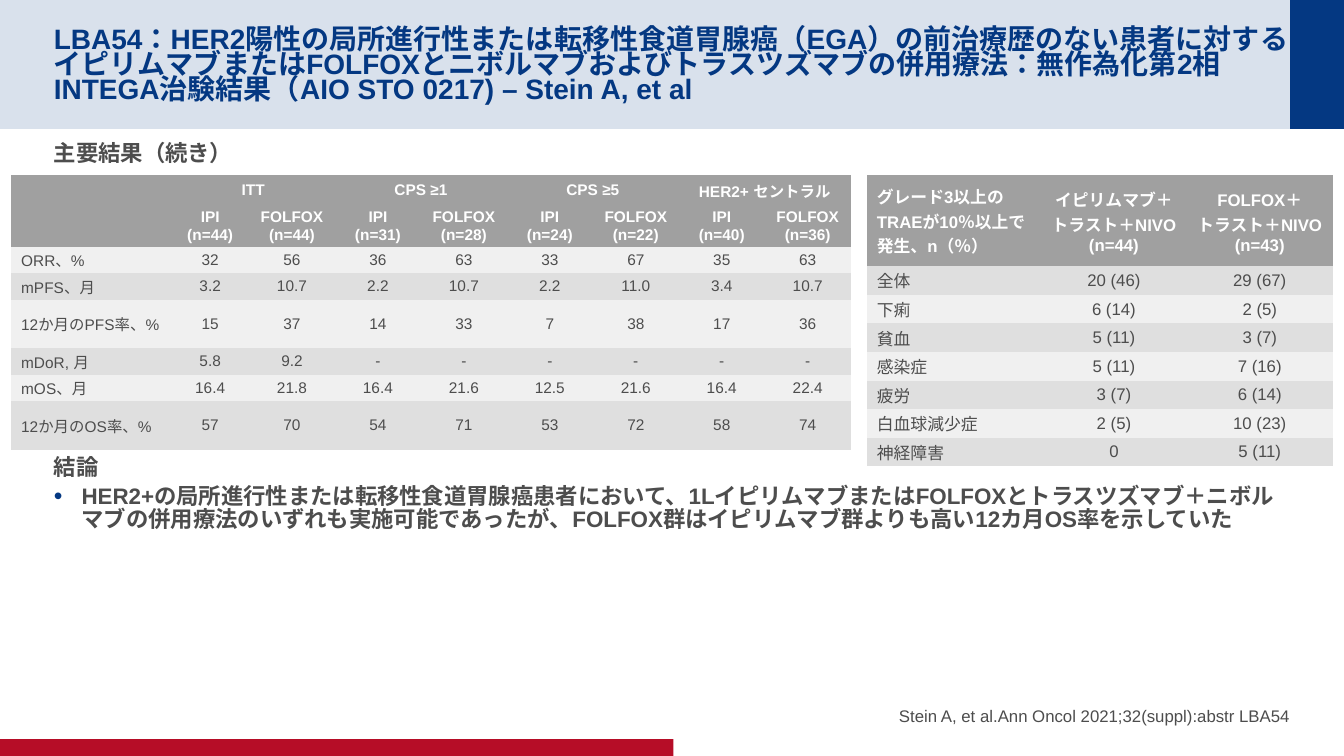
"""Build the slide of INTEGA trial results with an efficacy table and a toxicity table."""
import copy

import pptx
import pptx.dml.color
import pptx.enum.lang
import pptx.enum.shapes
import pptx.enum.text
import pptx.oxml
import pptx.oxml.ns
import pptx.util

Pt = pptx.util.Pt
ALIGN = pptx.enum.text.PP_ALIGN
ANCHOR = pptx.enum.text.MSO_ANCHOR
NAVY, RED, TEXT, WHITE = "043882", "B60D27", "4D4D4D", "FFFFFF"
HEADER, LIGHT, DARK = "A0A0A0", "F0F0F0", "DFDFDF"
NO_STYLE = "{2D5ABB26-0587-4C30-8999-92F81FD0307C}"

TITLE = ("LBA54：HER2陽性の局所進行性または転移性食道胃腺癌（EGA）の前治療歴のない患者に対する"
         "イピリムマブまたはFOLFOXとニボルマブおよびトラスツズマブの併用療法：無作為化第2相INTEGA"
         "治験結果（AIO STO 0217) – Stein A, et al")
RESULTS, CONCLUSION = "主要結果（続き）", "結論"
FINDING = ("HER2+の局所進行性または転移性食道胃腺癌患者において、1LイピリムマブまたはFOLFOXと"
           "トラスツズマブ＋ニボルマブの併用療法のいずれも実施可能であったが、FOLFOX群はイピリムマブ群よりも"
           "高い12カ月OS率を示していた")
CITATION = "Stein A, et al.Ann Oncol 2021;32(suppl):abstr LBA54"

GROUPS = [("ITT", 44, 44), ("CPS ≥1", 31, 28), ("CPS ≥5", 24, 22), ("HER2+ セントラル", 40, 36)]
EFFICACY = [
    ("ORR、%", "32", "56", "36", "63", "33", "67", "35", "63"),
    ("mPFS、月", "3.2", "10.7", "2.2", "10.7", "2.2", "11.0", "3.4", "10.7"),
    ("12か月のPFS率、%", "15", "37", "14", "33", "7", "38", "17", "36"),
    ("mDoR, 月", "5.8", "9.2", "-", "-", "-", "-", "-", "-"),
    ("mOS、月", "16.4", "21.8", "16.4", "21.6", "12.5", "21.6", "16.4", "22.4"),
    ("12か月のOS率、%", "57", "70", "54", "71", "53", "72", "58", "74"),
]
TOXICITY = [
    ("グレード3以上のTRAEが10％以上で発生、n（％）", "イピリムマブ＋トラスト＋NIVO\n(n=44)",
     "FOLFOX＋\nトラスト＋NIVO\n(n=43)"),
    ("全体", "20 (46)", "29 (67)"),
    ("下痢", "6 (14)", "2 (5)"),
    ("貧血", "5 (11)", "3 (7)"),
    ("感染症", "5 (11)", "7 (16)"),
    ("疲労", "3 (7)", "6 (14)"),
    ("白血球減少症", "2 (5)", "10 (23)"),
    ("神経障害", "0", "5 (11)"),
]
BANDS = [
    (0, 0, 960, 92.16, NAVY, 15),
    (921.6, 0, 38.4, 92.16, NAVY, 100),
    (0, 528, 481, 12, RED, 100),
]


def colour(value):
    """Turn a hex string into a colour."""
    return pptx.dml.color.RGBColor.from_string(value)


def assign(target, values):
    """Set each named attribute on the target."""
    for name, value in values.items():
        setattr(target, name, value)


def element(tag, **attributes):
    """Make a drawing element with attributes."""
    node = pptx.oxml.parse_xml(f"<{tag} {pptx.oxml.ns.nsdecls('a')}/>")
    for name, value in attributes.items():
        node.set(name, str(value))
    return node


def write(para, text, size, shade, bold=False, **layout):
    """Fill a paragraph with text, its line breaks included."""
    para.text = text
    assign(para, layout)
    for span in para.runs:
        assign(span.font, {"name": "Arial", "size": Pt(size), "bold": bold,
                           "language_id": pptx.enum.lang.MSO_LANGUAGE_ID.JAPANESE})
        span.font.color.rgb = colour(shade)
    for line_break in para._p.findall(pptx.oxml.ns.qn("a:br")):
        line_break.append(copy.deepcopy(para.runs[0]._r.rPr))


def add_band(page, left, top, width, height, shade, opacity):
    """Draw one flat rectangle."""
    band = page.shapes.add_shape(pptx.enum.shapes.MSO_SHAPE.RECTANGLE,
                                 Pt(left), Pt(top), Pt(width), Pt(height))
    band.shadow.inherit = False
    band.fill.solid()
    band.fill.fore_color.rgb = colour(shade)
    band.line.fill.background()
    if opacity < 100:
        fill = band._element.spPr.find(pptx.oxml.ns.qn("a:solidFill"))
        fill[0].append(element("a:alpha", val=opacity * 1000))


def add_text(page, left, top, width, height, anchor, above, below):
    """Add a wrapping text frame without side margins."""
    frame = page.shapes.add_textbox(Pt(left), Pt(top), Pt(width), Pt(height)).text_frame
    assign(frame, {"word_wrap": True, "vertical_anchor": anchor, "margin_left": 0,
                   "margin_right": 0, "margin_top": Pt(above), "margin_bottom": Pt(below)})
    return frame


def add_grid(page, left, top, widths, heights):
    """Add an unstyled table with the given column widths and row heights."""
    table = page.shapes.add_table(len(heights), len(widths), Pt(left), Pt(top),
                                  Pt(sum(widths)), Pt(sum(heights))).table
    assign(table, {"first_row": False, "horz_banding": False})
    table._tbl.tblPr.find(pptx.oxml.ns.qn("a:tableStyleId")).text = NO_STYLE
    for column, width in zip(table.columns, widths):
        column.width = Pt(width)
    for row, height in zip(table.rows, heights):
        row.height = Pt(height)
    return table


def fill_grid(table, rows, headers, size, bands):
    """Write all cells; header rows are bold white on grey."""
    for row, values in enumerate(rows):
        heading = row < headers
        for column, value in enumerate(values):
            cell = table.cell(row, column)
            assign(cell, {"vertical_anchor": ANCHOR.MIDDLE, "margin_left": Pt(7.2),
                          "margin_right": Pt(7.2), "margin_top": Pt(1.44),
                          "margin_bottom": Pt(1.44)})
            cell.fill.solid()
            cell.fill.fore_color.rgb = colour(HEADER if heading else bands[(row - headers) % 2])
            write(cell.text_frame.paragraphs[0], value, size, WHITE if heading else TEXT, heading,
                  alignment=ALIGN.CENTER if column else ALIGN.LEFT)


def add_efficacy(page):
    """Add the table of response and survival by group."""
    names, arms = [""], [""]
    for name, ipi, folfox in GROUPS:
        names += [name, ""]
        arms += [f"IPI\n(n={ipi})", f"FOLFOX\n(n={folfox})"]
    table = add_grid(page, 7.9, 125.3, [114.5, 55.5] + [61.4] * 7,
                     [21.6, 27.6, 19, 19, 34.5, 19, 19, 34.5])
    fill_grid(table, [names, arms] + EFFICACY, 2, 11, (LIGHT, DARK))
    table.cell(0, 0).merge(table.cell(1, 0))
    for column in range(1, 9, 2):
        table.cell(0, column).merge(table.cell(0, column + 1))


def add_body(page):
    """Add the headings and the bulleted conclusion."""
    frame = add_text(page, 38.4, 98.6, 883.2, 373.7, ANCHOR.TOP, 3.6, 3.6)
    for index, (text, before) in enumerate([(RESULTS, 0), (CONCLUSION, 204), (FINDING, 0)]):
        para = frame.add_paragraph() if index else frame.paragraphs[0]
        write(para, text, 16, TEXT, True, line_spacing=0.86,
              space_before=Pt(before), space_after=Pt(4))
    properties = para._p.get_or_add_pPr()
    properties.set("marL", str(Pt(19.8)))
    properties.set("indent", str(-Pt(19.8)))
    bullet_colour = element("a:buClr")
    bullet_colour.append(element("a:srgbClr", val=NAVY))
    for node in (bullet_colour, element("a:buSzPct", val=110000),
                 element("a:buFont", typeface="Arial"), element("a:buChar", char="•")):
        properties.append(node)


def main():
    """Build and save the deck."""
    deck = pptx.Presentation()
    assign(deck, {"slide_width": Pt(960), "slide_height": Pt(540)})
    page = deck.slides.add_slide(deck.slide_layouts[6])
    for band in BANDS:
        add_band(page, *band)
    title = add_text(page, 38.4, 14.4, 883.2, 63.4, ANCHOR.MIDDLE, 3.6, 0)
    write(title.paragraphs[0], TITLE, 20, NAVY, True, line_spacing=0.74)
    add_body(page)
    citation = add_text(page, 488.2, 480.2, 433.4, 38.2, ANCHOR.BOTTOM, 0, 0)
    write(citation.paragraphs[0], CITATION, 12, TEXT, alignment=ALIGN.RIGHT, space_after=Pt(4))
    add_efficacy(page)
    toxicity = add_grid(page, 619.2, 125.3, [124.4, 104.2, 104.2], [65] + [20.4] * 7)
    fill_grid(toxicity, TOXICITY, 1, 12, (DARK, LIGHT))
    deck.save("out.pptx")


if __name__ == "__main__":
    main()
